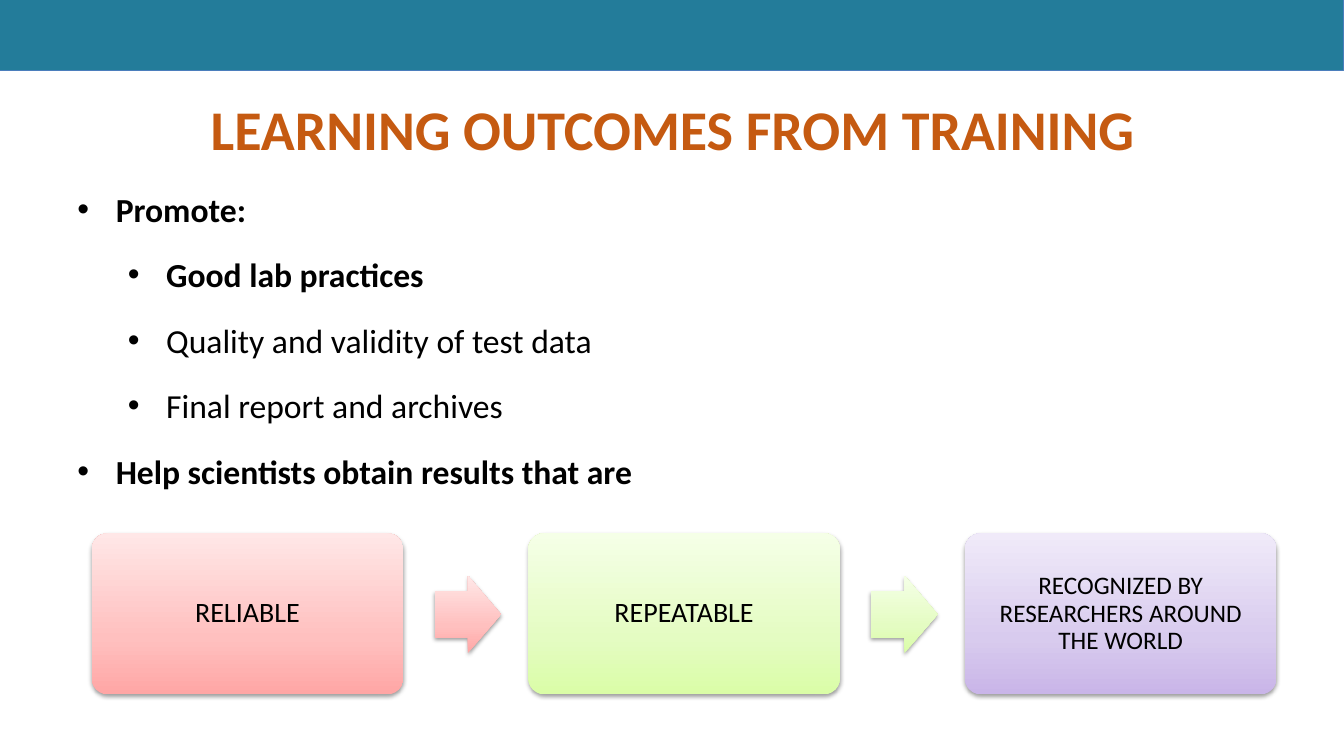
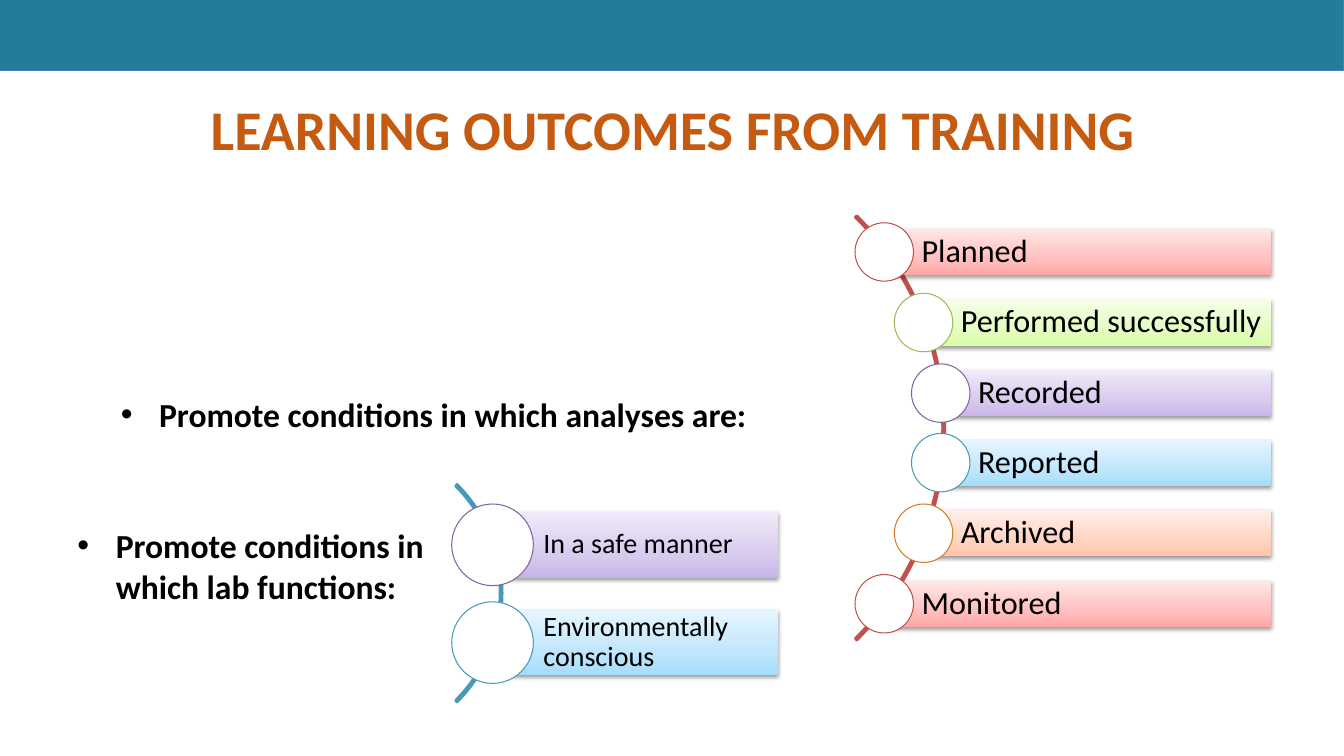
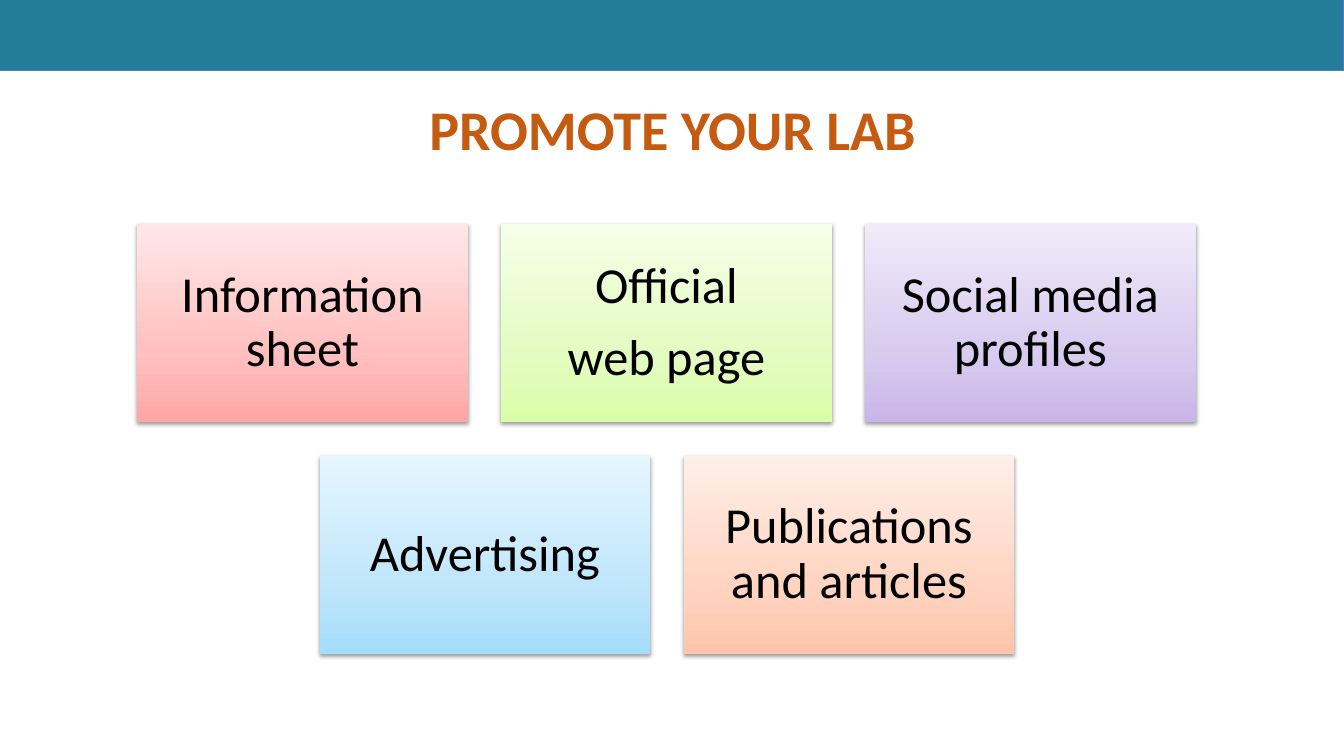
"""Builds three training slides about laboratory learning outcomes."""
from dataclasses import dataclass
from typing import Optional

from lxml.etree import SubElement
from pptx import Presentation
from pptx.dml.color import RGBColor
from pptx.enum.shapes import MSO_SHAPE as Preset
from pptx.enum.text import MSO_ANCHOR as Anchor, MSO_AUTO_SIZE as AutoSize, PP_ALIGN as Align
from pptx.oxml.ns import qn
from pptx.util import Pt

PX = 9144
SLIDE_WIDTH, SLIDE_HEIGHT = 1333, 750
FONT = "Calibri"
BLACK, WHITE, ORANGE = "000000", "FFFFFF", "C55A11"
BAND_FILL, BAND_LINE = "237C9A", "4B7EBC"
ARC_THICKNESS = 2
TITLE_INSETS = (10, 5, 10, 0)


@dataclass(frozen=True)
class Tone:
    dark: str
    middle: str
    light: str
    outline: str


RED = Tone("FFA6A5", "FFC0BF", "FFE7E7", "C0504D")
GREEN = Tone("DAFDA7", "E4FCC2", "F5FFE7", "9BBB59")
PURPLE = Tone("C9B5E8", "D8CBEE", "F0EAF9", "8064A2")
BLUE = Tone("A4DDFB", "C0E6FB", "E6F6FF", "4799B5")
PEACH = Tone("FFC4A9", "FFD5C2", "FFEFE8", "D37D28")


@dataclass(frozen=True)
class Box:
    left: int
    top: int
    width: int
    height: int

    def emu(self) -> tuple[int, ...]:
        return tuple(v * PX for v in (self.left, self.top, self.width, self.height))


@dataclass(frozen=True)
class Bullet:
    text: str
    level: int = 0
    bold: bool = True


@dataclass(frozen=True)
class Card:
    text: str
    tone: Tone
    size: int = 36
    inset: int = 15


@dataclass(frozen=True)
class Row:
    text: str
    tone: Tone
    left: int


@dataclass(frozen=True)
class ArcList:
    arc: Box
    colour: str
    rows: tuple[Row, ...]
    top: int
    last_top: int
    right: int
    bar_height: int
    circle: int
    text_inset: int
    size: int


OUTCOMES = (
    Bullet("Promote:"),
    Bullet("Good lab practices", 1),
    Bullet("Quality and validity of test data", 1, False),
    Bullet("Final report and archives", 1, False),
    Bullet("Help scientists obtain results that are"),
)
RESULTS = (
    Card("RELIABLE", RED, 20, 8),
    Card("REPEATABLE", GREEN, 20, 8),
    Card("RECOGNIZED BY RESEARCHERS AROUND THE WORLD", PURPLE, 18, 7),
)
ANALYSES = ArcList(
    Box(342, 127, 595, 595), RED.outline,
    (Row("Planned", RED, 877), Row("Performed successfully", GREEN, 916),
     Row("Recorded", PURPLE, 933), Row("Reported", BLUE, 933),
     Row("Archived", PEACH, 916), Row("Monitored", RED, 877)),
    top=227, last_top=576, right=1261, bar_height=46, circle=58, text_inset=37, size=23)
LAB_FUNCTIONS = ArcList(
    Box(193, 436, 305, 305), BLUE.outline,
    (Row("In a safe manner", PURPLE, 488), Row("Environmentally conscious", BLUE, 488)),
    top=508, last_top=605, right=772, bar_height=65, circle=81, text_inset=51, size=20)
CHANNELS = (
    (Card("Information sheet", RED), Card("Official\nweb page", GREEN),
     Card("Social media profiles", PURPLE)),
    (Card("Advertising", BLUE), Card("Publications and articles", PEACH)),
)


def rgb(colour: str) -> RGBColor:
    return RGBColor.from_string(colour)


def style_font(paragraph, size: int, colour: str = BLACK, bold: bool = False) -> None:
    font = paragraph.font
    font.name, font.size, font.bold = FONT, Pt(size), bold
    font.color.rgb = rgb(colour)


def set_frame(frame, insets: tuple[int, int, int, int], anchor: Anchor = Anchor.TOP) -> None:
    frame.word_wrap = True
    frame.auto_size = AutoSize.NONE
    frame.vertical_anchor = anchor
    (frame.margin_left, frame.margin_top,
     frame.margin_right, frame.margin_bottom) = (inset * PX for inset in insets)


def add_plain(slide, preset: Preset, box: Box, fill: Optional[str], line: str, width: float):
    shape = slide.shapes.add_shape(preset, *box.emu())
    shape.shadow.inherit = False
    if fill:
        shape.fill.solid()
        shape.fill.fore_color.rgb = rgb(fill)
    else:
        shape.fill.background()
    shape.line.color.rgb = rgb(line)
    shape.line.width = Pt(width)
    return shape


def add_shaded(slide, preset: Preset, box: Box, tone: Tone):
    shape = slide.shapes.add_shape(preset, *box.emu())
    shape.line.fill.background()
    shape.fill.gradient()
    shape.fill.gradient_angle = 90
    stops = shape.element.find(".//" + qn("a:gsLst"))
    stops.clear()
    for position, colour in ((0, tone.dark), (35, tone.middle), (100, tone.light)):
        stop = SubElement(stops, qn("a:gs"), pos=str(position * 1000))
        SubElement(stop, qn("a:srgbClr"), val=colour)
    shape.shadow.inherit = False
    effects = shape.element.find(".//" + qn("a:effectLst"))
    shadow = SubElement(effects, qn("a:outerShdw"), blurRad=str(Pt(3.1)), dist=str(Pt(1.6)),
                        dir="5400000", rotWithShape="0")
    SubElement(SubElement(shadow, qn("a:srgbClr"), val=BLACK), qn("a:alpha"), val="38000")
    return shape


def write_label(shape, text: str, size: int, insets: tuple[int, int, int, int],
                align: Align = Align.CENTER) -> None:
    set_frame(shape.text_frame, insets, Anchor.MIDDLE)
    shape.text_frame.text = text
    for paragraph in shape.text_frame.paragraphs:
        paragraph.alignment = align
        paragraph.line_spacing = 0.9
        paragraph.space_after = Pt(0.35 * size)
        style_font(paragraph, size)


def add_bullets(slide, box: Box, bullets: tuple[Bullet, ...]) -> None:
    frame = slide.shapes.add_textbox(*box.emu()).text_frame
    set_frame(frame, TITLE_INSETS)
    frame.text = "\n".join(bullet.text for bullet in bullets)
    for index, (paragraph, bullet) in enumerate(zip(frame.paragraphs, bullets)):
        paragraph.level = bullet.level
        properties = paragraph._p.get_or_add_pPr()
        properties.set("marL", str((38 + 50 * bullet.level) * PX))
        properties.set("indent", str(-38 * PX))
        SubElement(properties, qn("a:buFont"), typeface="Arial")
        SubElement(properties, qn("a:buChar"), char="•")
        if index:
            paragraph.space_before = Pt(18)
        style_font(paragraph, 24, bold=bullet.bold)


def add_arc_list(slide, arc_list: ArcList) -> None:
    arc = add_plain(slide, Preset.BLOCK_ARC, arc_list.arc, None, arc_list.colour, 2)
    for index, value in enumerate((189, 27, ARC_THICKNESS / arc_list.arc.width)):
        arc.adjustments[index] = value
    pitch = (arc_list.last_top - arc_list.top) / (len(arc_list.rows) - 1)
    circle = arc_list.circle
    for index, row in enumerate(arc_list.rows):
        top = round(arc_list.top + index * pitch)
        bar = add_shaded(slide, Preset.RECTANGLE,
                         Box(row.left, top, arc_list.right - row.left, arc_list.bar_height),
                         row.tone)
        write_label(bar, row.text, arc_list.size, (arc_list.text_inset, 6, 6, 6), Align.LEFT)
        add_plain(slide, Preset.OVAL,
                  Box(row.left - circle // 2, top + (arc_list.bar_height - circle) // 2,
                      circle, circle), WHITE, row.tone.outline, 0.75)


def add_card(slide, preset: Preset, box: Box, card: Card):
    shape = add_shaded(slide, preset, box, card.tone)
    write_label(shape, card.text, card.size, (card.inset,) * 4)
    return shape


def add_result_flow(slide) -> None:
    for index, card in enumerate(RESULTS):
        left = 91 + 433 * index
        box = add_card(slide, Preset.ROUNDED_RECTANGLE, Box(left, 529, 309, 160), card)
        box.adjustments[0] = 0.1
        if index < len(RESULTS) - 1:
            arrow = add_shaded(slide, Preset.RIGHT_ARROW, Box(left + 340, 571, 66, 77), card.tone)
            arrow.adjustments[0] = 0.6


def add_channel_grid(slide) -> None:
    width, height, gap, centre = 328, 197, 33, 661
    for row_index, cards in enumerate(CHANNELS):
        row_left = centre - (len(cards) * (width + gap) - gap) // 2
        for index, card in enumerate(cards):
            box = Box(row_left + index * (width + gap), 222 + row_index * (height + gap),
                      width, height)
            add_card(slide, Preset.RECTANGLE, box, card)


def add_layout_band(layout, slide) -> None:
    band = add_plain(slide, Preset.RECTANGLE, Box(0, 0, SLIDE_WIDTH, 70),
                     BAND_FILL, BAND_LINE, 0.75)
    band.element.find(".//" + qn("p:cNvPr")).set("id", "99")
    layout.shapes.element.insert(2, band.element)


def add_titled_slide(presentation, title_text: str):
    slide = presentation.slides.add_slide(presentation.slide_layouts[5])
    title = slide.shapes.title
    title.left, title.top, title.width, title.height = Box(67, 89, 1200, 65).emu()
    set_frame(title.text_frame, TITLE_INSETS)
    title.text_frame.text = title_text
    paragraph = title.text_frame.paragraphs[0]
    paragraph.alignment = Align.CENTER
    style_font(paragraph, 40, ORANGE, True)
    return slide


def main() -> None:
    presentation = Presentation()
    presentation.slide_width, presentation.slide_height = SLIDE_WIDTH * PX, SLIDE_HEIGHT * PX

    slide = add_titled_slide(presentation, "LEARNING OUTCOMES FROM TRAINING")
    add_layout_band(slide.slide_layout, slide)
    add_bullets(slide, Box(67, 182, 1177, 479), OUTCOMES)
    add_result_flow(slide)

    slide = add_titled_slide(presentation, "LEARNING OUTCOMES FROM TRAINING")
    add_bullets(slide, Box(110, 386, 731, 78),
                (Bullet("Promote conditions in which analyses are:"),))
    add_arc_list(slide, ANALYSES)
    add_bullets(slide, Box(67, 516, 380, 145),
                (Bullet("Promote conditions in which lab functions:"),))
    add_arc_list(slide, LAB_FUNCTIONS)

    slide = add_titled_slide(presentation, "PROMOTE YOUR LAB")
    add_channel_grid(slide)

    presentation.save("out.pptx")


if __name__ == "__main__":
    main()
